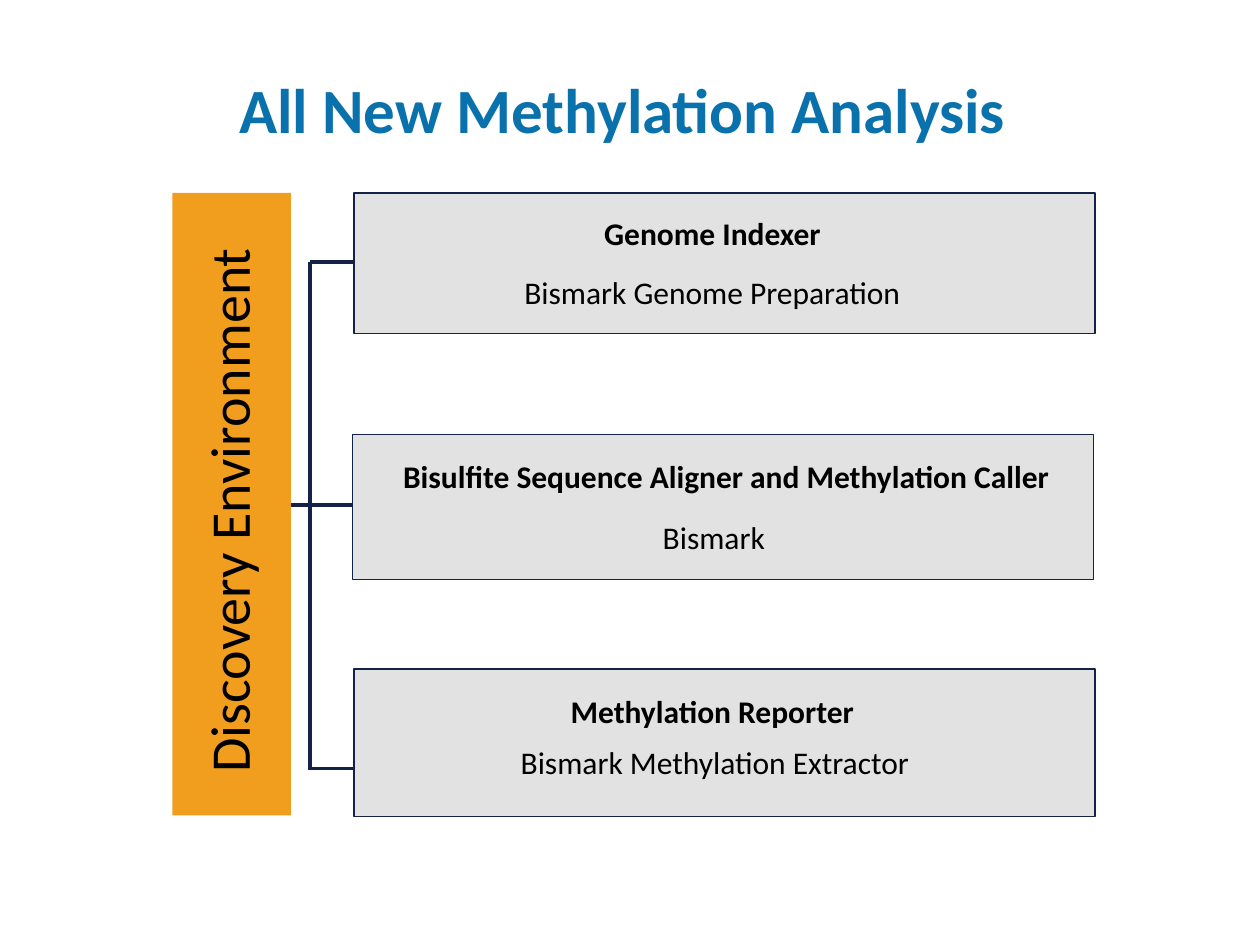
"""Build the methylation analysis overview slide."""
from lxml import etree
from pptx import Presentation
from pptx.dml.color import RGBColor
from pptx.enum import shapes, text
from pptx.oxml.ns import qn
from pptx.util import Pt

BLUE = RGBColor(0x09, 0x71, 0xAB)
NAVY = RGBColor(0x14, 0x22, 0x48)
ORANGE = RGBColor(0xF1, 0x9E, 0x1F)
GREY = RGBColor(0xE2, 0xE2, 0xE2)
BLACK = RGBColor(0, 0, 0)


def write(box, words, size, color, bold=False, inset=(7.2, 3.6), anchor=text.MSO_ANCHOR.TOP):
    frame = box.text_frame
    frame.word_wrap = True
    frame.vertical_anchor = anchor
    frame.margin_left = frame.margin_right = Pt(inset[0])
    frame.margin_top = frame.margin_bottom = Pt(inset[1])
    para = frame.paragraphs[0]
    para.alignment = text.PP_ALIGN.CENTER
    para.add_run().text = words
    para.font.name = "Calibri"
    para.font.size = Pt(size)
    para.font.bold = bold
    para.font.color.rgb = color
    return para


def add_panel(page, left, top, width, height, fill):
    panel = page.shapes.add_shape(
        shapes.MSO_SHAPE.RECTANGLE, Pt(left), Pt(top), Pt(width), Pt(height))
    panel.shadow.inherit = False
    panel.fill.solid()
    panel.fill.fore_color.rgb = fill
    return panel


deck = Presentation()
deck.slide_width, deck.slide_height = Pt(720), Pt(540)
page = deck.slides.add_slide(deck.slide_layouts[6])

bracket = [
    (150.5, 288.7, 226.8, 288.7),
    (177.1, 149.8, 253.4, 149.8),
    (176.4, 439.2, 252.7, 439.2),
    (177.1, 149.8, 177.1, 439.9),
]
for ends in bracket:
    line = page.shapes.add_connector(
        shapes.MSO_CONNECTOR.STRAIGHT, *[Pt(value) for value in ends])
    line.line.color.rgb = NAVY
    line.line.width = Pt(2)
    etree.SubElement(line._element.spPr, qn("a:effectLst"))

title = page.shapes.add_textbox(Pt(36.7), Pt(13.7), Pt(648), Pt(90))
heading = write(title, "All New Methylation Analysis", 36, BLUE, True,
                (7.2, 7.2), text.MSO_ANCHOR.MIDDLE)
span = heading.add_run()
span.text = " "
span.font.size = Pt(44)

bar = add_panel(page, -45.4, 254.2, 355.7, 67.7, ORANGE)
bar.line.fill.background()
bar.rotation = 270
label = write(bar, "Discovery Environment ", 32, BLACK, False,
              (2.2, 2.2), text.MSO_ANCHOR.MIDDLE)
label.line_spacing = 0.9

cards = [
    ((202.3, 110.2, 80.6), ("Genome Indexer", 226.8, 118.8, 360.7),
     ("Bismark Genome Preparation", 242.6, 152.6)),
    ((201.6, 248.4, 82.8),
     ("Bisulfite Sequence Aligner and Methylation Caller", 221.8, 257.8, 386.6),
     ("Bismark", 243.4, 292.3)),
    ((202.3, 382.3, 84.2), ("Methylation Reporter", 213.8, 391.7, 386.6),
     ("Bismark Methylation Extractor", 244.1, 421.2)),
]
for (left, top, height), step, tool in cards:
    card = add_panel(page, left, top, 423.4, height, GREY)
    card.line.color.rgb = NAVY
    card.line.width = Pt(0.75)
    for (words, x, y, width), bold in ((step, True), ((*tool, 329), False)):
        box = page.shapes.add_textbox(Pt(x), Pt(y), Pt(width), Pt(28.8))
        write(box, words, 18, BLACK, bold)

deck.save("out.pptx")
